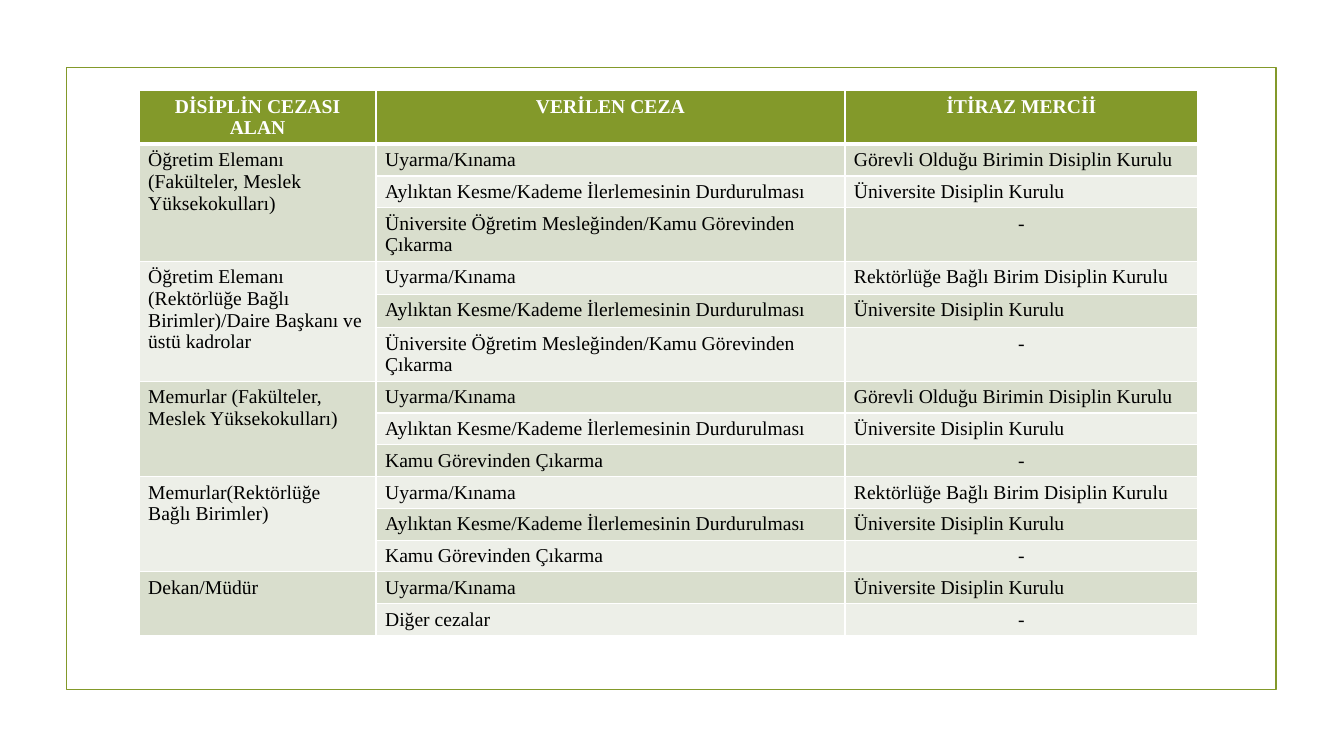
"""Build the slide listing disciplinary penalties and their appeal authorities."""
from dataclasses import dataclass

import pptx
import pptx.dml.color
import pptx.enum.shapes
import pptx.enum.text
import pptx.oxml
import pptx.oxml.ns
import pptx.table
import pptx.util
from pptx.util import Inches

GREEN = "83992A"
WHITE = "FFFFFF"
BLACK = "000000"
BANDS = ("D9DECD", "EDEFE8")
FONT = "Times New Roman"

HEADINGS = ("DİSİPLİN CEZASI ALAN", "VERİLEN CEZA", "İTİRAZ MERCİİ")
COLUMN_WIDTHS = (2.35, 4.65, 3.5)
HEADER_HEIGHT = 0.53

WARNING = "Uyarma/Kınama"
PAY_CUT = "Aylıktan Kesme/Kademe İlerlemesinin Durdurulması"
TEACHING_DISMISSAL = "Üniversite Öğretim Mesleğinden/Kamu Görevinden Çıkarma"
DISMISSAL = "Kamu Görevinden Çıkarma"
UNIT_BOARD = "Görevli Olduğu Birimin Disiplin Kurulu"
RECTORATE_BOARD = "Rektörlüğe Bağlı Birim Disiplin Kurulu"
UNIVERSITY_BOARD = "Üniversite Disiplin Kurulu"
NO_APPEAL = "-"


@dataclass
class Penalty:
    name: str
    authority: str
    height: float = 0.31


@dataclass
class StaffGroup:
    name: str
    penalties: list[Penalty]


STAFF_GROUPS = [
    StaffGroup("Öğretim Elemanı (Fakülteler, Meslek Yüksekokulları)", [
        Penalty(WARNING, UNIT_BOARD),
        Penalty(PAY_CUT, UNIVERSITY_BOARD),
        Penalty(TEACHING_DISMISSAL, NO_APPEAL, 0.53),
    ]),
    StaffGroup("Öğretim Elemanı (Rektörlüğe Bağlı Birimler)/Daire Başkanı ve üstü kadrolar", [
        Penalty(WARNING, RECTORATE_BOARD, 0.33),
        Penalty(PAY_CUT, UNIVERSITY_BOARD, 0.33),
        Penalty(TEACHING_DISMISSAL, NO_APPEAL, 0.53),
    ]),
    StaffGroup("Memurlar (Fakülteler, Meslek Yüksekokulları)", [
        Penalty(WARNING, UNIT_BOARD),
        Penalty(PAY_CUT, UNIVERSITY_BOARD),
        Penalty(DISMISSAL, NO_APPEAL),
    ]),
    StaffGroup("Memurlar(Rektörlüğe Bağlı Birimler)", [
        Penalty(WARNING, RECTORATE_BOARD),
        Penalty(PAY_CUT, UNIVERSITY_BOARD),
        Penalty(DISMISSAL, NO_APPEAL),
    ]),
    StaffGroup("Dekan/Müdür", [
        Penalty(WARNING, UNIVERSITY_BOARD),
        Penalty("Diğer cezalar", NO_APPEAL),
    ]),
]


def color(value: str) -> pptx.dml.color.RGBColor:
    return pptx.dml.color.RGBColor.from_string(value)


def add_border(cell: pptx.table._Cell, side: str, points: float) -> None:
    line = pptx.oxml.parse_xml(
        f'<a:ln{side} {pptx.oxml.ns.nsdecls("a")} w="{pptx.util.Pt(points)}">'
        f'<a:solidFill><a:srgbClr val="{WHITE}"/></a:solidFill></a:ln{side}>'
    )
    cell._tc.get_or_add_tcPr().append(line)


def style_cell(cell: pptx.table._Cell, row: int) -> None:
    is_header = row == 0
    widths = {"L": 1, "R": 1, "T": 3 if row == 1 else 1, "B": 3 if is_header else 1}
    for side, points in widths.items():
        add_border(cell, side, points)
    cell.fill.solid()
    cell.fill.fore_color.rgb = color(GREEN if is_header else BANDS[(row - 1) % 2])
    cell.margin_left = cell.margin_right = Inches(0.09)
    cell.margin_top = cell.margin_bottom = Inches(0.05)


def write_cell(cell: pptx.table._Cell, text: str, is_header: bool = False) -> None:
    cell.text_frame.text = text
    paragraph = cell.text_frame.paragraphs[0]
    if is_header or text == NO_APPEAL:
        paragraph.alignment = pptx.enum.text.PP_ALIGN.CENTER
    font = paragraph.runs[0].font
    font.name = FONT
    font.size = pptx.util.Pt(14)
    font.bold = is_header
    font.color.rgb = color(WHITE if is_header else BLACK)


def add_frame(slide: pptx.slide.Slide) -> None:
    frame = slide.shapes.add_shape(
        pptx.enum.shapes.MSO_SHAPE.RECTANGLE,
        Inches(0.66), Inches(0.67), Inches(12), Inches(6.17),
    )
    frame.shadow.inherit = False
    frame.fill.background()
    frame.line.color.rgb = color(GREEN)
    frame.line.width = pptx.util.Pt(1.25)


def add_penalty_table(slide: pptx.slide.Slide) -> None:
    penalties = [penalty for group in STAFF_GROUPS for penalty in group.penalties]
    heights = [HEADER_HEIGHT] + [penalty.height for penalty in penalties]
    table = slide.shapes.add_table(
        len(heights), len(HEADINGS), Inches(1.38), Inches(0.9),
        Inches(sum(COLUMN_WIDTHS)), Inches(sum(heights)),
    ).table
    for column, width in zip(table.columns, COLUMN_WIDTHS):
        column.width = Inches(width)
    for row, height in enumerate(heights):
        table.rows[row].height = Inches(height)
        for column in range(len(HEADINGS)):
            style_cell(table.cell(row, column), row)
    for column, heading in enumerate(HEADINGS):
        write_cell(table.cell(0, column), heading, is_header=True)
    for row, penalty in enumerate(penalties, start=1):
        write_cell(table.cell(row, 1), penalty.name)
        write_cell(table.cell(row, 2), penalty.authority)
    first_row = 1
    for group in STAFF_GROUPS:
        next_row = first_row + len(group.penalties)
        group_cell = table.cell(first_row, 0)
        group_cell.merge(table.cell(next_row - 1, 0))
        write_cell(group_cell, group.name)
        first_row = next_row


def main() -> None:
    presentation = pptx.Presentation()
    presentation.slide_width = Inches(13.33)
    presentation.slide_height = Inches(7.5)
    slide = presentation.slides.add_slide(presentation.slide_layouts[6])
    add_frame(slide)
    add_penalty_table(slide)
    presentation.save("out.pptx")


if __name__ == "__main__":
    main()
